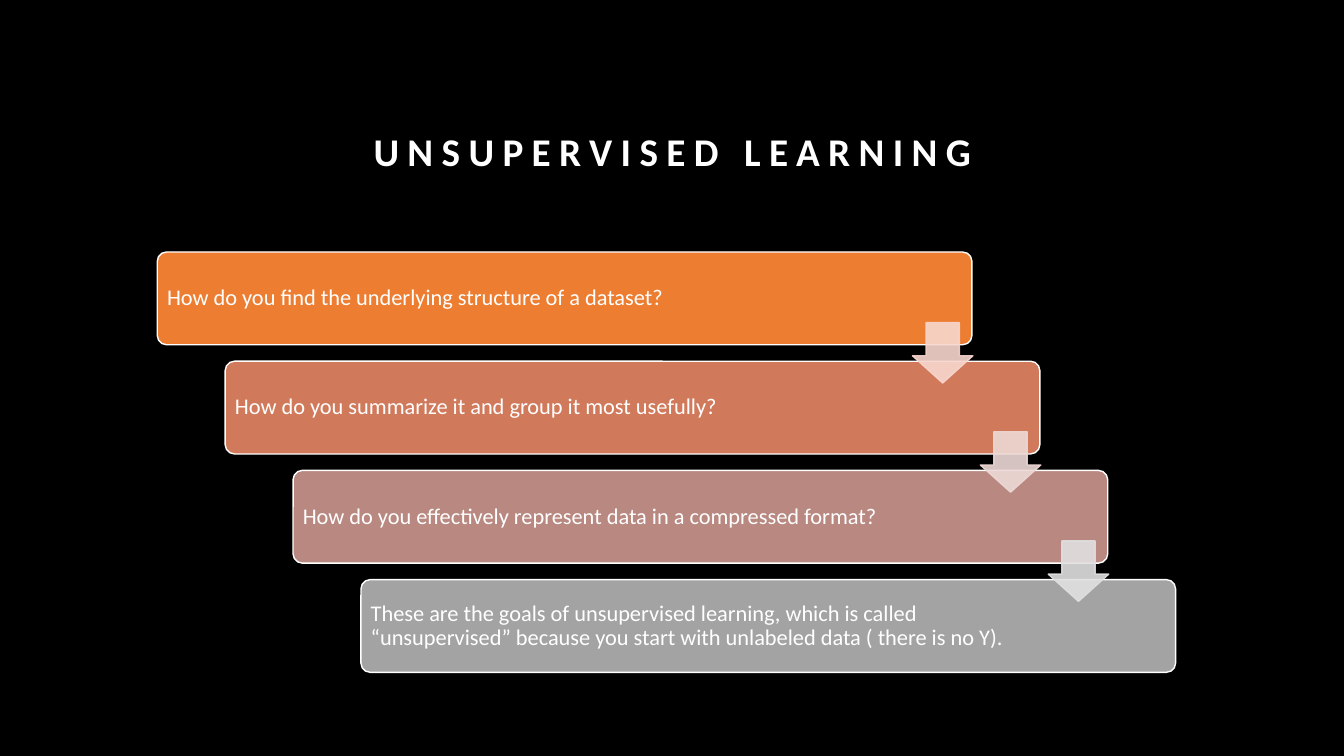
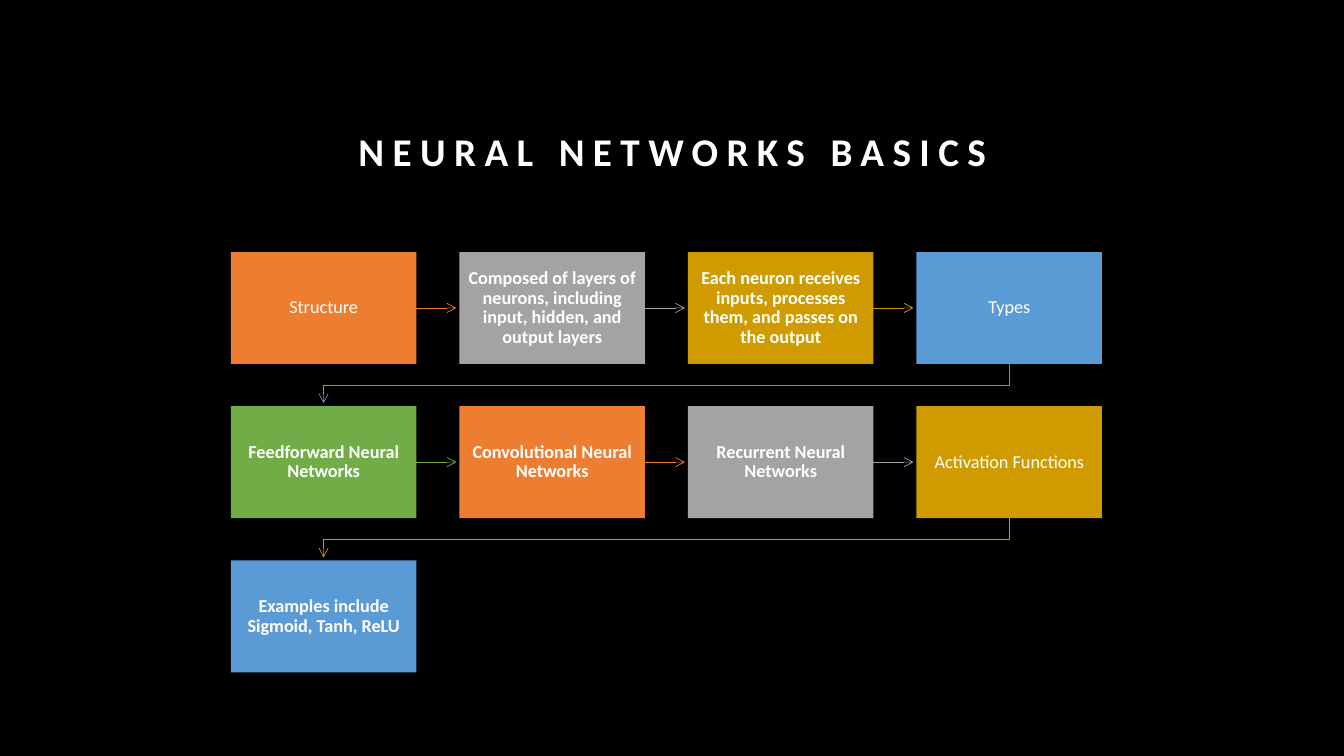
"""Build two slides: the goals of unsupervised learning and the basics of neural networks."""
from itertools import pairwise

from lxml.etree import SubElement
from pptx import Presentation
from pptx.dml.color import RGBColor
from pptx.enum.shapes import MSO_CONNECTOR, MSO_SHAPE
from pptx.enum.text import MSO_ANCHOR, MSO_AUTO_SIZE, PP_ALIGN
from pptx.oxml.ns import qn
from pptx.util import Inches, Pt

GOALS_TITLE = "UNSUPERVISED LEARNING"
GOALS = [
    ("How do you find the underlying structure of a dataset?", "ED7D31"),
    ("How do you summarize it and group it most usefully?", "D17A5B"),
    ("How do you effectively represent data in a compressed format?", "B88881"),
    ("These are the goals of unsupervised learning, which is called “unsupervised” "
     "because you start with unlabeled data ( there is no Y).", "A3A3A3"),
]
GOAL_ARROWS = ["F8D7CE", "EDD9D6", "E0E0E0"]

BASICS_TITLE = "NEURAL NETWORKS BASICS"
BASICS = [
    ("Structure", False),
    ("Composed of layers of neurons, including input, hidden, and output layers", True),
    ("Each neuron receives inputs, processes them, and passes on the output", True),
    ("Types", False),
    ("Feedforward Neural Networks", True),
    ("Convolutional Neural Networks", True),
    ("Recurrent Neural Networks", True),
    ("Activation Functions", False),
    ("Examples include Sigmoid, Tanh, ReLU", True),
]

THEME = {
    "font": "Calibri", "background": "000000", "text": "FFFFFF",
    "accents": ["ED7D31", "A3A3A3", "CF9B00", "5B9BD5", "70AD47"],
    "title_size": 28, "goal_size": 16, "basic_size": 13,
    "outline": 1, "arrow_line": 0.5, "arrow_opacity": 90,
}
SLIDE_WIDTH, SLIDE_HEIGHT = 13.33, 7.5
TITLE_BOX = {"left": 1.67, "top": 0.83, "width": 10, "height": 0.95}
CONTENT_TOP, CONTENT_HEIGHT = 2.5, 4.17
STAIR = {"left": 1.56, "width": 10.1}
GOAL_WIDTH, GOAL_HEIGHT = 8.08, 0.92
GOAL_ARROW = {"right": 7.49, "down": 0.7, "size": 0.6}
GRID = {"left": 2.29, "width": 8.64, "columns": 4, "rows": 3}
CELL_WIDTH, CELL_HEIGHT = 1.84, 1.11
ARROW_GAP = 0.03


def color(value):
    return RGBColor.from_string(value)


def set_attributes(target, values):
    for name, value in values.items():
        setattr(target, name, value)


def write(frame, text, size, bold=False, align=PP_ALIGN.LEFT, spacing=0.9,
          anchor=MSO_ANCHOR.MIDDLE, insets=()):
    frame.text = text
    set_attributes(frame, {"word_wrap": True, "auto_size": MSO_AUTO_SIZE.NONE,
                           "vertical_anchor": anchor})
    sides = ("margin_left", "margin_top", "margin_right", "margin_bottom")
    set_attributes(frame, {side: Inches(inset) for side, inset in zip(sides, insets)})
    paragraph = frame.paragraphs[0]
    set_attributes(paragraph, {"alignment": align, "line_spacing": spacing})
    run = paragraph.runs[0]
    set_attributes(run.font, {"name": THEME["font"], "size": Pt(size), "bold": bold})
    run.font.color.rgb = color(THEME["text"])
    return run


def add_title_slide(deck, title):
    slide = deck.slides.add_slide(deck.slide_layouts[5])
    run = write(slide.shapes.title.text_frame, title, THEME["title_size"], True,
                PP_ALIGN.CENTER, 1.2, MSO_ANCHOR.BOTTOM)
    run.font.element.set("spc", "600") if hasattr(run.font, "element") else run._r.get_or_add_rPr().set("spc", "600")
    return slide


def add_block(slide, kind, left, top, width, height, fill, outline=None):
    block = slide.shapes.add_shape(kind, *map(Inches, (left, top, width, height)))
    block.shadow.inherit = False
    block.fill.solid()
    block.fill.fore_color.rgb = color(fill)
    if outline:
        block.line.color.rgb = color(outline)
        block.line.width = Pt(THEME["outline"])
    else:
        block.line.fill.background()
    return block


def style_arrow(arrow, stroke):
    arrow.line.color.rgb = color(stroke)
    arrow.line.width = Pt(THEME["arrow_line"])
    SubElement(arrow.line._get_or_add_ln(), qn("a:tailEnd"), type="arrow")


def add_goals(deck):
    slide = add_title_slide(deck, GOALS_TITLE)
    steps = len(GOALS) - 1
    shift = (STAIR["width"] - GOAL_WIDTH) / steps
    drop = (CONTENT_HEIGHT - GOAL_HEIGHT) / steps
    corners = [(STAIR["left"] + i * shift, CONTENT_TOP + i * drop) for i in range(steps + 1)]
    for (text, fill), (left, top) in zip(GOALS, corners):
        goal = add_block(slide, MSO_SHAPE.ROUNDED_RECTANGLE, left, top,
                         GOAL_WIDTH, GOAL_HEIGHT, fill, THEME["text"])
        goal.adjustments[0] = 0.1
        write(goal.text_frame, text, THEME["goal_size"], insets=(0.07, 0.07, 1.33, 0.07))
    for tint, (left, top) in zip(GOAL_ARROWS, corners):
        arrow = add_block(slide, MSO_SHAPE.DOWN_ARROW, left + GOAL_ARROW["right"],
                          top + GOAL_ARROW["down"], GOAL_ARROW["size"], GOAL_ARROW["size"],
                          tint, tint)
        arrow.adjustments[0], arrow.adjustments[1] = 0.55, 0.45
        for paint in arrow.element.spPr.iter(qn("a:srgbClr")):
            SubElement(paint, qn("a:alpha"), val=str(THEME["arrow_opacity"] * 1000))


def add_straight_arrow(slide, start, end, stroke):
    middle = start.top + start.height // 2
    arrow = slide.shapes.add_connector(MSO_CONNECTOR.STRAIGHT, start.left + start.width, middle,
                                       end.left - Inches(ARROW_GAP), middle)
    arrow.begin_connect(start, 3)
    style_arrow(arrow, stroke)
    SubElement(arrow.element.spPr, qn("a:effectLst"))


def add_return_arrow(slide, start, end, stroke):
    start_x, end_x = (cell.left + cell.width // 2 for cell in (start, end))
    start_y = start.top + start.height
    turn_y = (start_y + end.top) // 2
    outline = slide.shapes.build_freeform(start_x, start_y)
    outline.add_line_segments([(start_x, turn_y), (end_x, turn_y),
                               (end_x, end.top - Inches(ARROW_GAP))], close=False)
    arrow = outline.convert_to_shape()
    arrow.shadow.inherit = False
    arrow.fill.background()
    style_arrow(arrow, stroke)


def add_basics(deck):
    slide = add_title_slide(deck, BASICS_TITLE)
    across = (GRID["width"] - CELL_WIDTH) / (GRID["columns"] - 1)
    down = (CONTENT_HEIGHT - CELL_HEIGHT) / (GRID["rows"] - 1)
    cells = []
    for index, (text, bold) in enumerate(BASICS):
        row, column = divmod(index, GRID["columns"])
        fill = THEME["accents"][index % len(THEME["accents"])]
        cell = add_block(slide, MSO_SHAPE.RECTANGLE, GRID["left"] + column * across,
                         CONTENT_TOP + row * down, CELL_WIDTH, CELL_HEIGHT, fill)
        write(cell.text_frame, text, THEME["basic_size"], bold, PP_ALIGN.CENTER,
              insets=(0.09,) * 4)
        cells.append((cell, fill))
    for (start, stroke), (end, _) in pairwise(cells):
        connect = add_straight_arrow if start.top == end.top else add_return_arrow
        connect(slide, start, end, stroke)


def main():
    deck = Presentation()
    set_attributes(deck, {"slide_width": Inches(SLIDE_WIDTH),
                          "slide_height": Inches(SLIDE_HEIGHT)})
    backdrop = deck.slide_master.background.fill
    backdrop.solid()
    backdrop.fore_color.rgb = color(THEME["background"])
    title = deck.slide_layouts[5].placeholders[0]
    set_attributes(title, {side: Inches(length) for side, length in TITLE_BOX.items()})
    add_goals(deck)
    add_basics(deck)
    deck.save("out.pptx")


if __name__ == "__main__":
    main()
